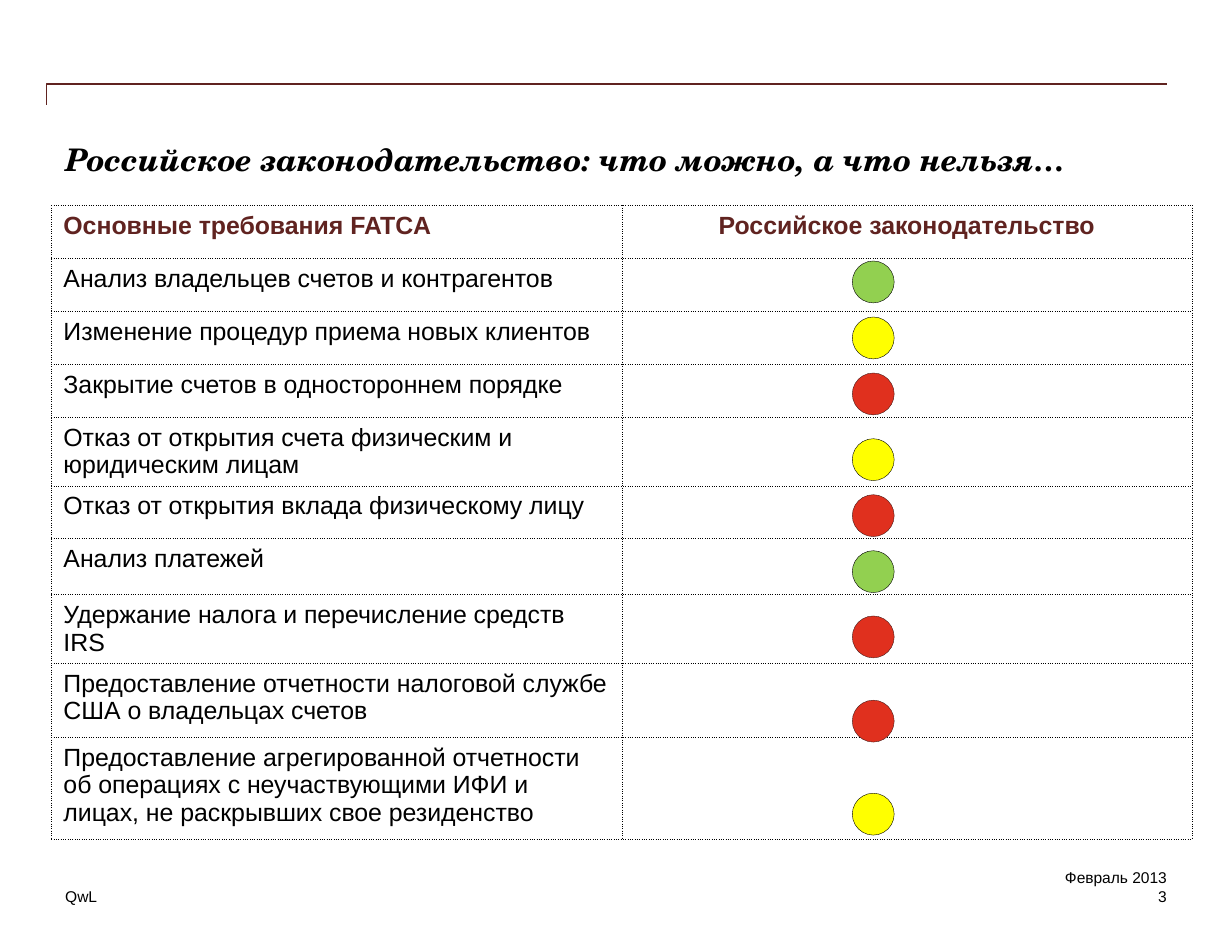
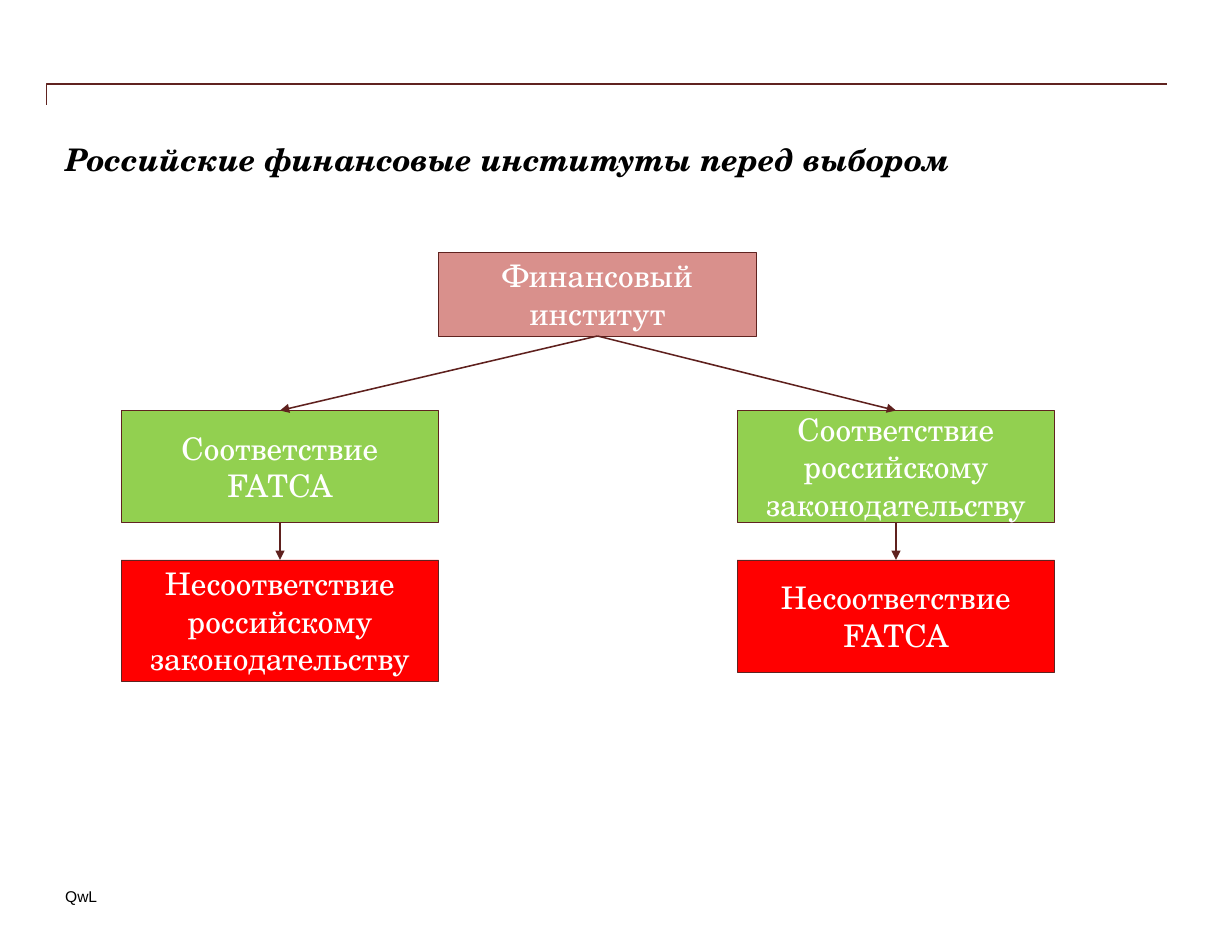
from dataclasses import dataclass
from typing import NamedTuple

from lxml import etree
from pptx import Presentation
from pptx.dml.color import RGBColor
from pptx.enum.shapes import MSO_CONNECTOR, MSO_SHAPE
from pptx.enum.text import MSO_ANCHOR, MSO_AUTO_SIZE, PP_ALIGN
from pptx.oxml.ns import qn
from pptx.util import Cm, Pt

LEFT, CENTER, RIGHT = PP_ALIGN.LEFT, PP_ALIGN.CENTER, PP_ALIGN.RIGHT
TOP, MIDDLE = MSO_ANCHOR.TOP, MSO_ANCHOR.MIDDLE
RECT, OVAL = MSO_SHAPE.RECTANGLE, MSO_SHAPE.OVAL
STRAIGHT = MSO_CONNECTOR.STRAIGHT
NO_AUTOFIT = MSO_AUTO_SIZE.NONE
TITLE_ONLY = 5
TOP_SITE, BOTTOM_SITE = 0, 2


@dataclass(frozen=True)
class Theme:
    text: str = "000000"
    white: str = "FFFFFF"
    maroon: str = "602320"
    arrow: str = "5F211E"
    rose: str = "D9908C"
    green: str = "92D050"
    yellow: str = "FFFF00"
    red: str = "E0301E"
    red_edge: str = "471A18"
    bright_red: str = "FF0000"
    sans: str = "Arial"
    serif: str = "TeX Gyre Schola"
    title_size: int = 20
    box_size: int = 20
    table_size: int = 16
    footer_size: int = 10
    thin: float = 0.25
    line: float = 1


T = Theme()


class Rating(NamedTuple):
    fill: str
    edge: str


ALLOWED = Rating(T.green, T.text)
PARTLY = Rating(T.yellow, T.text)
FORBIDDEN = Rating(T.red, T.red_edge)


class Requirement(NamedTuple):
    text: str
    height: float
    rating: Rating
    dot_top: float


class Box(NamedTuple):
    text: str
    left: float
    top: float
    height: float
    fill: str


# Content, lengths in centimetres
HEADER = ("Основные требования FATCA", "Российское законодательство")
HEADER_HEIGHT = 1.2
REQUIREMENTS = (
    Requirement("Анализ владельцев счетов и контрагентов", 1.2, ALLOWED, 5.92),
    Requirement("Изменение процедур приема новых клиентов", 1.2, PARTLY, 7.19),
    Requirement("Закрытие счетов в одностороннем порядке", 1.2, FORBIDDEN, 8.46),
    Requirement("Отказ от открытия счета физическим и юридическим лицам",
                1.54, PARTLY, 9.95),
    Requirement("Отказ от открытия вклада физическому лицу", 1.2, FORBIDDEN, 11.22),
    Requirement("Анализ платежей", 1.27, ALLOWED, 12.49),
    Requirement("Удержание налога и перечисление средств IRS",
                1.54, FORBIDDEN, 13.97),
    Requirement("Предоставление отчетности налоговой службе США о владельцах счетов",
                1.68, FORBIDDEN, 15.88),
    Requirement("Предоставление агрегированной отчетности об операциях с "
                "неучаствующими ИФИ и лицах, не раскрывших свое резиденство",
                2.31, PARTLY, 17.99),
)
COLUMN_WIDTH = 12.93
DOT_LEFT, DOT_SIZE = 19.33, 0.95

BOX_WIDTH = 7.2
LEFT_BRANCH, RIGHT_BRANCH = 2.75, 16.72
INSTITUTION = Box("Финансовый институт", 9.95, 5.72, 1.9, T.rose)
BRANCHES = (
    (Box("Соответствие FATCA", LEFT_BRANCH, 9.31, 2.54, T.green),
     Box("Несоответствие российскому законодательству",
         LEFT_BRANCH, 12.7, 2.75, T.bright_red)),
    (Box("Соответствие российскому законодательству",
         RIGHT_BRANCH, 9.31, 2.54, T.green),
     Box("Несоответствие FATCA", RIGHT_BRANCH, 12.7, 2.54, T.bright_red)),
)


def rgb(color: str) -> RGBColor:
    return RGBColor.from_string(color)


def write(tf, text: str, *, size: int, font: str = T.sans, color: str = T.text,
          bold: bool = False, italic: bool = False, align=LEFT) -> None:
    p = tf.paragraphs[0]
    p.alignment = align
    r = p.add_run()
    r.text = text
    f = r.font
    f.name, f.size, f.bold, f.italic = font, Pt(size), bold, italic
    f.color.rgb = rgb(color)


def clear_insets(tf) -> None:
    tf.margin_left = tf.margin_right = tf.margin_top = tf.margin_bottom = 0
    tf.word_wrap = True
    tf.auto_size = NO_AUTOFIT
    tf.vertical_anchor = TOP


def add_label(s, text: str, left: float, top: float, width: float, align=LEFT) -> None:
    sp = s.shapes.add_textbox(Cm(left), Cm(top), Cm(width), Cm(0.43))
    clear_insets(sp.text_frame)
    write(sp.text_frame, text, size=T.footer_size, align=align)


def add_filled(s, kind, left: float, top: float, width: float, height: float,
               fill: str, edge: str):
    sp = s.shapes.add_shape(kind, Cm(left), Cm(top), Cm(width), Cm(height))
    sp.shadow.inherit = False
    sp.fill.solid()
    sp.fill.fore_color.rgb = rgb(fill)
    sp.line.color.rgb = rgb(edge)
    sp.line.width = Pt(T.thin)
    return sp


def add_slide(prs, title: str):
    """Slide with the corner rule, the title and the firm name."""
    s = prs.slides.add_slide(prs.slide_layouts[TITLE_ONLY])
    sp = s.shapes.title
    sp.left, sp.top, sp.width, sp.height = Cm(1.48), Cm(3.18), Cm(24.98), Cm(2.54)
    clear_insets(sp.text_frame)
    write(sp.text_frame, title, size=T.title_size, font=T.serif, bold=True, italic=True)

    rule = s.shapes.build_freeform(Cm(1.06), Cm(2.38))
    rule.add_line_segments([(Cm(1.06), Cm(1.91)), (Cm(26.46), Cm(1.91))], close=False)
    sp = rule.convert_to_shape()
    sp.shadow.inherit = False
    sp.fill.background()
    sp.line.color.rgb = rgb(T.maroon)
    sp.line.width = Pt(T.line)

    add_label(s, "QwL", 1.48, 20.11, 8.04)
    return s


def set_borders(cell) -> None:
    """Thin dotted line on all four sides; call before setting the fill."""
    tc_pr = cell._tc.get_or_add_tcPr()
    for side in ("lnL", "lnR", "lnT", "lnB"):
        ln = etree.SubElement(tc_pr, qn(f"a:{side}"), w=str(Pt(T.thin)))
        fill = etree.SubElement(ln, qn("a:solidFill"))
        etree.SubElement(fill, qn("a:srgbClr"), val=T.text)
        etree.SubElement(ln, qn("a:prstDash"), val="sysDot")


def add_requirements(s) -> None:
    heights = [HEADER_HEIGHT] + [q.height for q in REQUIREMENTS]
    table = s.shapes.add_table(len(heights), 2, Cm(1.17), Cm(4.66),
                               Cm(2 * COLUMN_WIDTH), Cm(sum(heights))).table
    table.first_row = table.horz_banding = False
    for column in table.columns:
        column.width = Cm(COLUMN_WIDTH)
    for row, height in zip(table.rows, heights):
        row.height = Cm(height)
    for cell in table.iter_cells():
        cell.margin_left = cell.margin_right = Cm(0.27)
        cell.margin_top = cell.margin_bottom = Cm(0.15)
        set_borders(cell)
        cell.fill.background()

    for col, (text, align) in enumerate(zip(HEADER, (LEFT, CENTER))):
        write(table.cell(0, col).text_frame, text, size=T.table_size,
              color=T.maroon, bold=True, align=align)
    for row, q in enumerate(REQUIREMENTS, start=1):
        write(table.cell(row, 0).text_frame, q.text, size=T.table_size)
        add_filled(s, OVAL, DOT_LEFT, q.dot_top, DOT_SIZE, DOT_SIZE, *q.rating)


def add_box(s, box: Box):
    sp = add_filled(s, RECT, box.left, box.top, BOX_WIDTH, box.height,
                    box.fill, T.maroon)
    tf = sp.text_frame
    tf.word_wrap = True
    tf.vertical_anchor = MIDDLE
    write(tf, box.text, size=T.box_size, font=T.serif, color=T.white, align=CENTER)
    return sp


def add_arrow(s, upper, lower) -> None:
    """Arrow from the bottom of one box to the top of the next."""
    cx = s.shapes.add_connector(STRAIGHT, 0, 0, 0, 0)
    cx.begin_connect(upper, BOTTOM_SITE)
    cx.end_connect(lower, TOP_SITE)
    cx.line.color.rgb = rgb(T.arrow)
    cx.line.width = Pt(T.line)
    sp_pr = cx._element.spPr
    etree.SubElement(sp_pr.find(qn("a:ln")), qn("a:tailEnd"), type="triangle")
    etree.SubElement(sp_pr, qn("a:effectLst"))


def main() -> None:
    prs = Presentation()
    prs.slide_width, prs.slide_height = Cm(27.94), Cm(21.59)

    # Requirements against the law
    s = add_slide(prs, "Российское законодательство: что можно, а что нельзя…")
    add_label(s, "Февраль 2013", 21.8, 19.69, 4.66, RIGHT)
    add_label(s, "3", 21.8, 20.11, 4.66, RIGHT)
    add_requirements(s)

    # Choice facing the institutions
    s = add_slide(prs, "Российские финансовые институты перед выбором")
    root = add_box(s, INSTITUTION)
    for branch in BRANCHES:
        upper = root
        for box in branch:
            lower = add_box(s, box)
            add_arrow(s, upper, lower)
            upper = lower

    prs.save("out.pptx")


if __name__ == "__main__":
    main()
